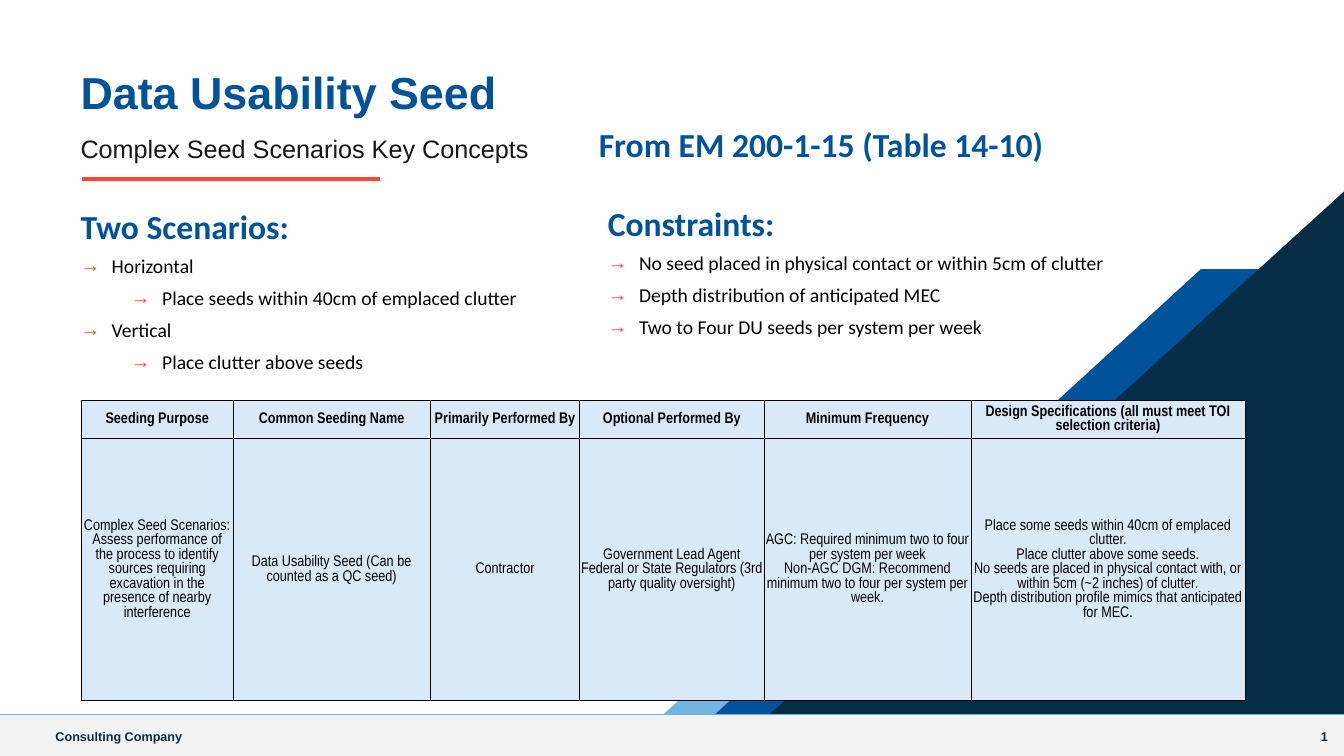
from lxml import etree
from pptx import Presentation
from pptx import util as u
from pptx.dml.color import RGBColor
from pptx.enum import shapes, text
from pptx.oxml import ns

BLUE = RGBColor(0x00, 0x53, 0x9B)
SKY = RGBColor(0x72, 0xB4, 0xE3)
NAVY = RGBColor(0x06, 0x2D, 0x46)
FOOTER_NAVY = RGBColor(0x09, 0x2D, 0x46)
RED = RGBColor(0xFF, 0x44, 0x38)
GREY = RGBColor(0xF2, 0xF2, 0xF2)
INK = RGBColor(0x18, 0x17, 0x17)
BLACK = RGBColor(0, 0, 0)
CELL = RGBColor(0xDA, 0xE9, 0xF8)

COLUMNS = [
    (150, "Seeding Purpose",
     "Complex Seed Scenarios: Assess performance of the process to identify sources "
     "requiring excavation in the presence of nearby interference"),
    (196, "Common Seeding Name", "Data Usability Seed (Can be counted as a QC seed)"),
    (148, "Primarily Performed By", "Contractor"),
    (183, "Optional Performed By",
     "Government Lead Agent\nFederal or State Regulators (3rd party quality oversight)"),
    (205, "Minimum Frequency",
     "AGC: Required minimum two to four per system per week\n"
     "Non-AGC DGM: Recommend minimum two to four per system per week."),
    (272, "Design Specifications (all must meet TOI selection criteria)",
     "Place some seeds within 40cm of emplaced clutter.\n"
     "Place clutter above some seeds.\n"
     "No seeds are placed in physical contact with, or within 5cm (~2 inches) of clutter.\n"
     "Depth distribution profile mimics that anticipated for MEC."),
]


def px(n):
    """Turn px, 100 to the inch, into EMU."""
    return u.Emu(n * 9144)


def style(p, name, size, color, bold=False):
    """Set the font of a paragraph."""
    f = p.font
    f.name, f.size, f.bold = name, u.Pt(size), bold
    f.color.rgb = color


def sub(parent, tag, **attrs):
    """Append a drawing element to a parent."""
    return etree.SubElement(parent, ns.qn("a:" + tag), attrs)


def add_text_box(s, x, y, w, h):
    """Add a wrapping text box and return its frame."""
    tf = s.shapes.add_textbox(*map(px, (x, y, w, h))).text_frame
    tf.word_wrap = True
    tf.auto_size = text.MSO_AUTO_SIZE.SHAPE_TO_FIT_TEXT
    return tf


def add_rule(s, x, y, w, color, weight):
    """Draw a horizontal line."""
    line = s.shapes.add_connector(shapes.MSO_CONNECTOR.STRAIGHT, px(x), px(y), px(x + w), px(y))
    line.line.color.rgb, line.line.width = color, u.Pt(weight)
    sub(line._element.spPr, "effectLst")


def add_corner(s, x, y):
    """Layer the three slanted bands from the given top left point."""
    bands = [
        (SKY, [(666, 266), (674, 557), (0, 559), (320, 266)]),
        (BLUE, [(710, 77), (685, 559), (51, 559), (577, 77)]),
        (NAVY, [(719, 0), (720, 560), (105, 559)]),
    ]
    group = s.shapes.add_group_shape()
    for color, points in bands:
        start, *rest = [(px(x + dx), px(y + dy)) for dx, dy in points]
        outline = group.shapes.build_freeform(*start)
        outline.add_line_segments(rest)
        sp = outline.convert_to_shape()
        sp.shadow.inherit = False
        sp.fill.solid()
        sp.fill.fore_color.rgb = color
        sp.line.fill.background()


def add_title(s, x, y, w, h):
    """Write the title and subtitle with the red rule below."""
    tf = add_text_box(s, x, y, w, h)
    p = tf.paragraphs[0]
    p.text = "Data Usability Seed"
    style(p, "Arial", 32, BLUE, True)
    p = tf.add_paragraph()
    p.text = "Complex Seed Scenarios Key Concepts"
    p.line_spacing = 1.5
    style(p, "Arial", 18, INK)
    add_rule(s, x + 11, y + 119, 296, RED, 2.75)


def add_list(s, x, y, w, h, heading, items=()):
    """Write a heading and its (level, text) arrow items."""
    tf = add_text_box(s, x, y, w, h)
    p = tf.paragraphs[0]
    p.text = heading
    style(p, "Calibri", 24, BLUE, True)
    for level, item in items:
        p = tf.add_paragraph()
        p.text, p.level, p.space_before = item, level, u.Pt(6)
        pPr = p._p.get_or_add_pPr()
        pPr.set("marL", str(px(31 + 50 * level)))
        pPr.set("indent", str(px(-31)))
        sub(sub(pPr, "buClr"), "srgbClr", val=str(RED))
        sub(pPr, "buFont", typeface="Arial")
        sub(pPr, "buChar", char="→")
        style(p, "Calibri", 14, BLACK)


def fill_cell(cell, words, bold):
    """Write and format one bordered table cell."""
    cell.text = words
    cell.vertical_anchor = text.MSO_ANCHOR.MIDDLE
    cell.margin_left = cell.margin_right = cell.margin_top = px(1)
    cell.margin_bottom = 0
    tcPr = cell._tc.get_or_add_tcPr()
    for side in "LRTB":
        border = sub(tcPr, "ln" + side, w=str(u.Pt(0.5)))
        sub(sub(border, "solidFill"), "srgbClr", val=str(BLACK))
    cell.fill.solid()
    cell.fill.fore_color.rgb = CELL
    for p in cell.text_frame.paragraphs:
        p.alignment = text.PP_ALIGN.CENTER
        style(p, "Arial Narrow", 11, BLACK, bold)


def add_seed_table(s, x, y, w, h):
    """Add the table of seeding requirements."""
    table = s.shapes.add_table(2, len(COLUMNS), *map(px, (x, y, w, h))).table
    table.rows[0].height, table.rows[1].height = px(35), px(h - 35)
    for i, (width, *entries) in enumerate(COLUMNS):
        table.columns[i].width = px(width)
        for row, words in enumerate(entries):
            fill_cell(table.cell(row, i), words, row == 0)


def add_footer(s, x, y, w, h):
    """Draw the footer band with company name and page number."""
    sp = s.shapes.add_shape(shapes.MSO_SHAPE.RECTANGLE, *map(px, (x, y, w, h)))
    sp.shadow.inherit = False
    sp.fill.solid()
    sp.fill.fore_color.rgb = GREY
    sp.line.fill.background()
    tf = sp.text_frame
    tf.margin_left, tf.margin_right = px(55), 0
    tf.vertical_anchor = text.MSO_ANCHOR.MIDDLE
    p = tf.paragraphs[0]
    p.text = "Consulting Company\t1"
    p.alignment = text.PP_ALIGN.LEFT
    tabs = sub(p._p.get_or_add_pPr(), "tabLst")
    sub(tabs, "tab", pos=str(px(w - 73)), algn="r")
    style(p, "Arial", 9, FOOTER_NAVY, True)
    add_rule(s, x, y, w, SKY, 1)


def main():
    """Build the slide and save it."""
    prs = Presentation()
    prs.slide_width, prs.slide_height = u.Inches(13.33), u.Inches(7.5)
    s = prs.slides.add_slide(prs.slide_layouts[6])
    add_corner(s, 614, 190)
    add_title(s, 70, 59, 588, 105)
    add_footer(s, 0, 709, 1335, 44)
    add_list(s, 70, 199, 1188, 178, "Two Scenarios:", [
        (0, "Horizontal"),
        (1, "Place seeds within 40cm of emplaced clutter"),
        (0, "Vertical"),
        (1, "Place clutter above seeds"),
    ])
    add_list(s, 593, 196, 658, 146, "Constraints:", [
        (0, "No seed placed in physical contact or within 5cm of clutter"),
        (0, "Depth distribution of anticipated MEC"),
        (0, "Two to Four DU seeds per system per week"),
    ])
    add_seed_table(s, 81, 397, 1154, 295)
    add_list(s, 584, 118, 542, 50, "From EM 200-1-15 (Table 14-10)")
    prs.save("out.pptx")


if __name__ == "__main__":
    main()
